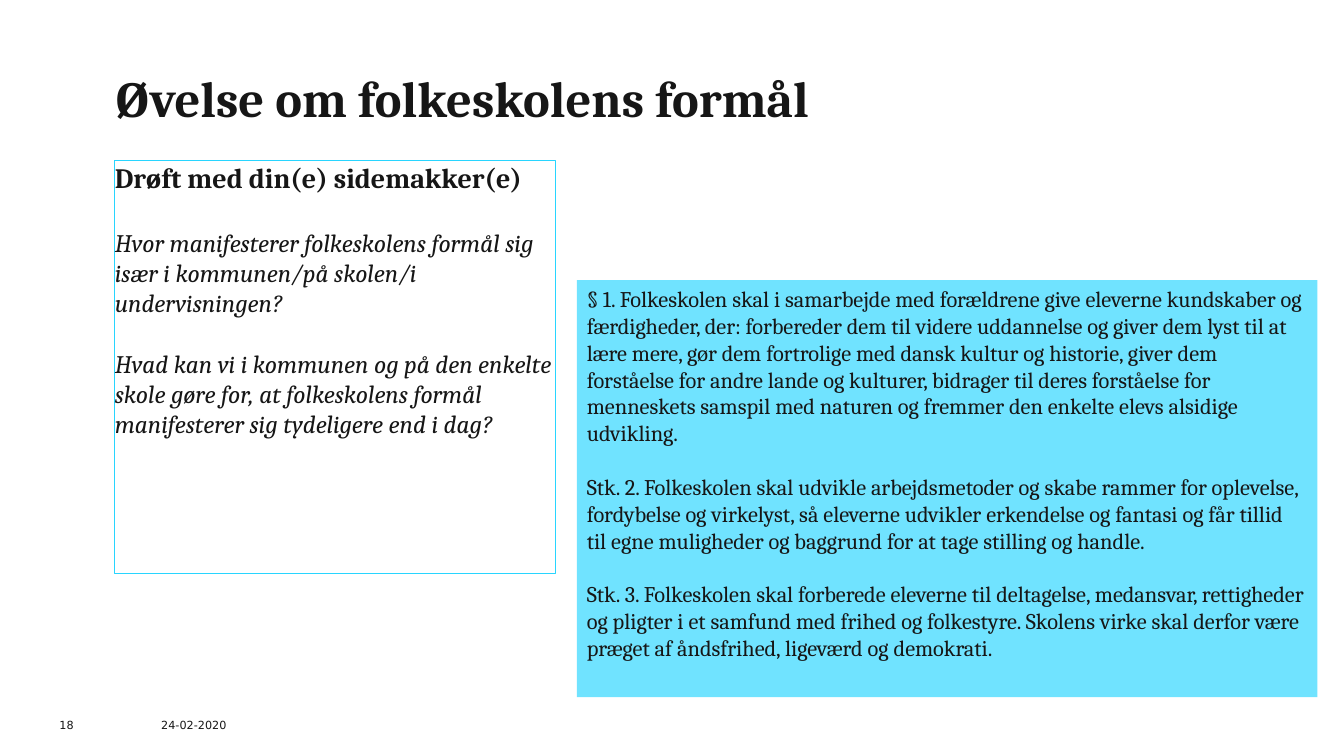
from dataclasses import dataclass

from lxml.etree import SubElement
from pptx import Presentation
from pptx.dml.color import RGBColor
from pptx.enum.text import MSO_ANCHOR, MSO_AUTO_SIZE, PP_ALIGN
from pptx.oxml.ns import qn
from pptx.util import Pt


@dataclass(frozen=True)
class Theme:
    ink: RGBColor = RGBColor(0x16, 0x16, 0x16)
    outline: RGBColor = RGBColor(0x28, 0xD5, 0xFF)
    panel: RGBColor = RGBColor(0x70, 0xE3, 0xFF)
    serif: str = "Cambria"
    sans: str = "DejaVu Sans"
    title: int = 36
    heading: int = 20
    question: int = 18
    law: int = 16
    footer: int = 8


THEME = Theme()

QUESTIONS = [
    "Hvor manifesterer folkeskolens formål sig især i kommunen/på skolen/i undervisningen?",
    "Hvad kan vi i kommunen og på den enkelte skole gøre for, at folkeskolens formål "
    "manifesterer sig tydeligere end i dag?",
]
LAW = [
    "§ 1. Folkeskolen skal i samarbejde med forældrene give eleverne kundskaber og "
    "færdigheder, der: forbereder dem til videre uddannelse og giver dem lyst til at lære "
    "mere, gør dem fortrolige med dansk kultur og historie, giver dem forståelse for andre "
    "lande og kulturer, bidrager til deres forståelse for menneskets samspil med naturen og "
    "fremmer den enkelte elevs alsidige udvikling.",
    "Stk. 2. Folkeskolen skal udvikle arbejdsmetoder og skabe rammer for oplevelse, "
    "fordybelse og virkelyst, så eleverne udvikler erkendelse og fantasi og får tillid til "
    "egne muligheder og baggrund for at tage stilling og handle.",
    "Stk. 3. Folkeskolen skal forberede eleverne til deltagelse, medansvar, rettigheder og "
    "pligter i et samfund med frihed og folkestyre. Skolens virke skal derfor være præget "
    "af åndsfrihed, ligeværd og demokrati.",
]


def place(shape, left, top, width, height):
    shape.left, shape.top = Pt(left), Pt(top)
    shape.width, shape.height = Pt(width), Pt(height)


def set_frame(shape, anchor=MSO_ANCHOR.TOP, inset_x=0, inset_y=0):
    frame = shape.text_frame
    frame.word_wrap = True
    frame.auto_size = MSO_AUTO_SIZE.NONE
    frame.vertical_anchor = anchor
    frame.margin_left = frame.margin_right = Pt(inset_x)
    frame.margin_top = frame.margin_bottom = Pt(inset_y)


def format_paragraph(paragraph, size, font=THEME.serif, bold=False, italic=False, before=0):
    paragraph.alignment = PP_ALIGN.LEFT
    paragraph.line_spacing = 1.0
    paragraph.space_before = Pt(before)
    paragraph.space_after = Pt(0)
    properties = paragraph._p.get_or_add_pPr()
    properties.set("marL", "0")
    properties.set("indent", "0")
    SubElement(properties, qn("a:buNone"))
    for run in paragraph.runs:
        run.font.name = font
        run.font.size = Pt(size)
        run.font.bold = bold
        run.font.italic = italic
        run.font.color.rgb = THEME.ink


def fill_title(title):
    place(title, 82, 48.2, 541, 44)
    set_frame(title)
    title.text_frame.text = "Øvelse om folkeskolens formål"
    format_paragraph(title.text_frame.paragraphs[0], THEME.title, bold=True)


def fill_questions(body):
    place(body, 82, 114.5, 315, 295.5)
    set_frame(body)
    body.line.color.rgb = THEME.outline
    body.line.width = Pt(0.75)
    body.text_frame.text = "\n".join(["Drøft med din(e) sidemakker(e)"] + QUESTIONS)
    heading, first, second = body.text_frame.paragraphs
    format_paragraph(heading, THEME.heading, bold=True)
    format_paragraph(first, THEME.question, italic=True, before=23.8)
    format_paragraph(second, THEME.question, italic=True, before=21.5)


def fill_law(body):
    place(body, 412, 200, 529, 298)
    set_frame(body, inset_x=7.2, inset_y=3.6)
    body.fill.solid()
    body.fill.fore_color.rgb = THEME.panel
    body.text_frame.text = "\n".join(LAW)
    for index, paragraph in enumerate(body.text_frame.paragraphs):
        format_paragraph(paragraph, THEME.law, before=19.1 if index else 0)


def add_footer(slide, text, left, width):
    box = slide.shapes.add_textbox(Pt(left), Pt(508.3), Pt(width), Pt(14.4))
    set_frame(box, anchor=MSO_ANCHOR.BOTTOM)
    box.text_frame.text = text
    format_paragraph(box.text_frame.paragraphs[0], THEME.footer, font=THEME.sans)


def main():
    presentation = Presentation()
    presentation.slide_width, presentation.slide_height = Pt(960), Pt(540)
    # Layout with a title and two bodies
    slide = presentation.slides.add_slide(presentation.slide_layouts[3])
    title, questions, law = slide.placeholders

    # Main content
    fill_title(title)
    fill_questions(questions)
    fill_law(law)

    # Page number and date
    add_footer(slide, "18", 42.5, 22)
    add_footer(slide, "24-02-2020", 115.2, 100)

    presentation.save("out.pptx")


if __name__ == "__main__":
    main()
